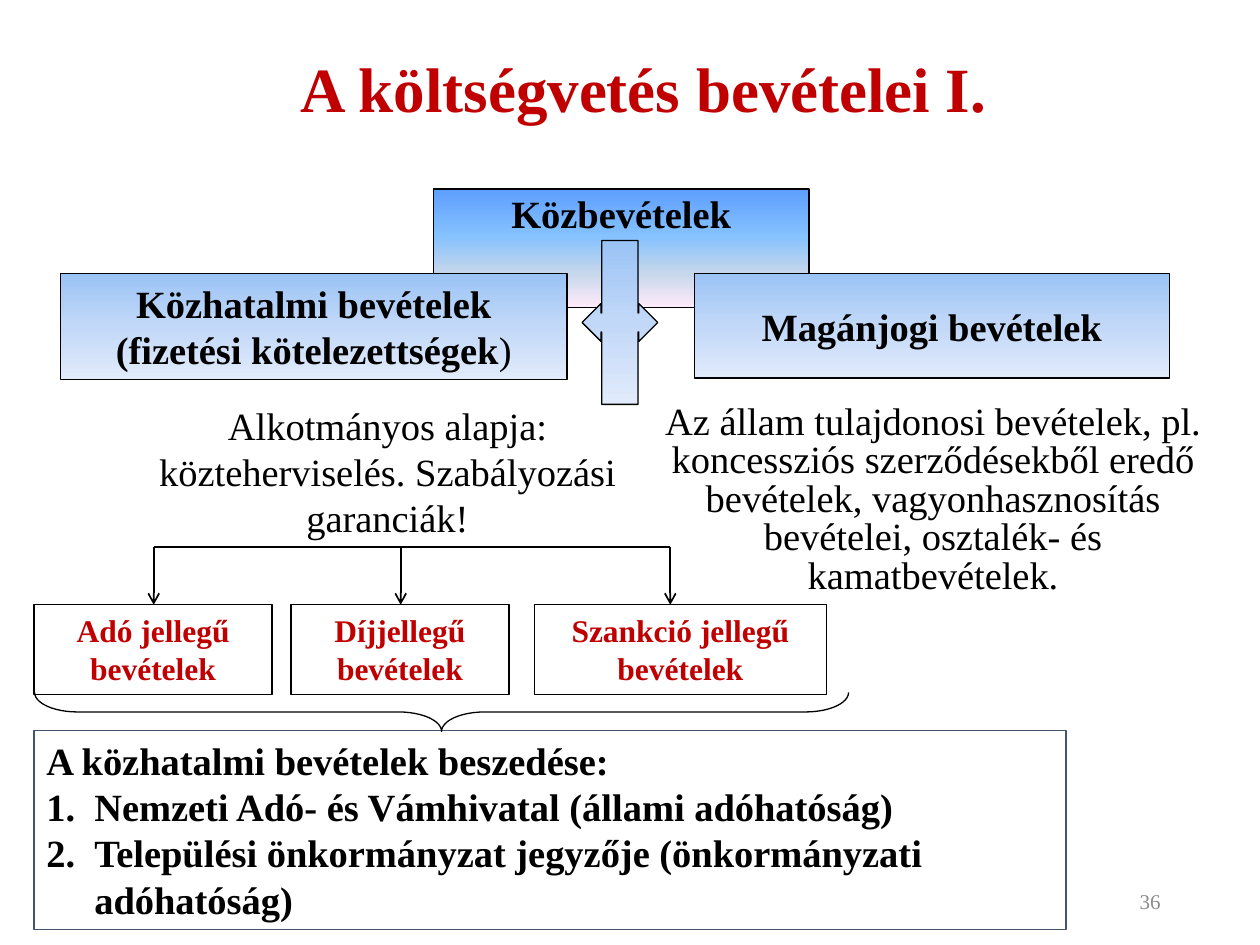
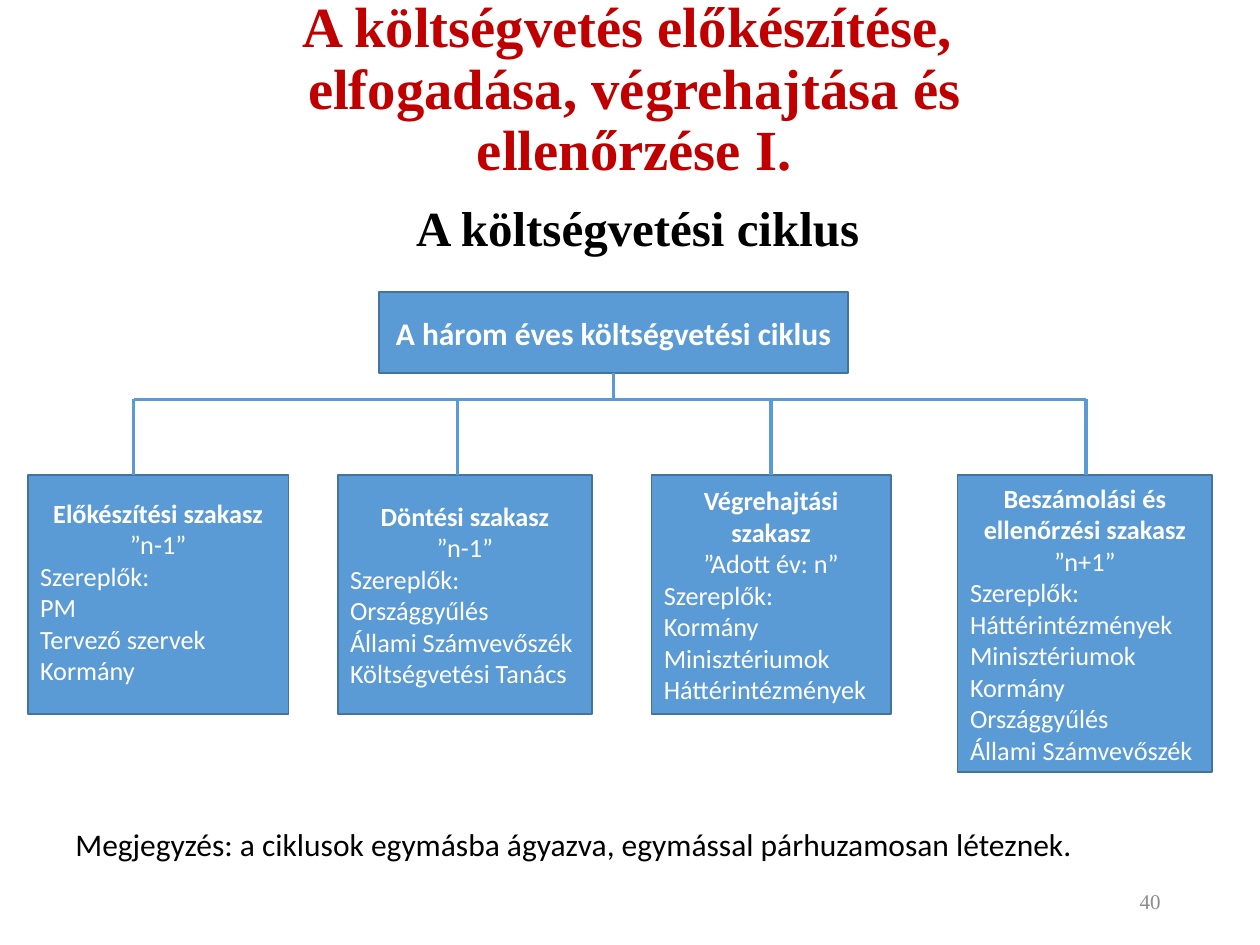
from dataclasses import dataclass

from lxml import etree
from pptx import Presentation
from pptx.dml.color import RGBColor
from pptx.enum.shapes import MSO_CONNECTOR, MSO_SHAPE
from pptx.enum.text import MSO_ANCHOR, MSO_AUTO_SIZE, PP_ALIGN
from pptx.oxml.ns import qn
from pptx.util import Inches, Pt

LEFT, CENTER, RIGHT = PP_ALIGN.LEFT, PP_ALIGN.CENTER, PP_ALIGN.RIGHT
TOP, MIDDLE = MSO_ANCHOR.TOP, MSO_ANCHOR.MIDDLE
RECT, CALLOUT, BRACE = MSO_SHAPE.RECTANGLE, MSO_SHAPE.LEFT_RIGHT_ARROW_CALLOUT, MSO_SHAPE.LEFT_BRACE
STRAIGHT = MSO_CONNECTOR.STRAIGHT
NO_FIT = MSO_AUTO_SIZE.NONE


@dataclass(frozen=True)
class Theme:
    serif: str = "Times New Roman"
    sans: str = "Calibri"
    red: str = "C00000"
    black: str = "000000"
    white: str = "FFFFFF"
    grey: str = "8C8C8C"
    slate: str = "44546A"
    blue: str = "5B9BD5"
    blue_edge: str = "43739E"
    strong_grad: tuple = ((0, "5E9EFF"), (40, "85C2FF"), (70, "C4D6EB"), (100, "FFEBFA"))
    soft_grad: tuple = ((0, "9AC3F5"), (50, "C2D8F8"), (100, "E1EBFB"))
    subtitle: float = 28
    body: float = 22
    label: float = 18
    stage: float = 15
    number: float = 12


T = Theme()


def add_box(s, at, lines=(), kind=RECT, fill=None, line=None, width=0.75, size=T.body,
            font=T.serif, color=T.black, bold=False, align=CENTER, anchor=TOP):
    at = [Inches(v) for v in at]
    if kind is None:
        sp = s.shapes.add_textbox(*at)
    else:
        sp = s.shapes.add_shape(kind, *at)
        sp.shadow.inherit = False
        sp.line.color.rgb = RGBColor.from_string(line)
        sp.line.width = Pt(width)
        if fill is None:
            sp.fill.background()
        elif isinstance(fill, str):
            sp.fill.solid()
            sp.fill.fore_color.rgb = RGBColor.from_string(fill)
        else:
            sp.fill.gradient()
            sp.fill.gradient_angle = 270
            stops = next(sp._element.iter(qn("a:gsLst")))
            for old in list(stops):
                stops.remove(old)
            for pos, rgb in fill:
                gs = etree.SubElement(stops, qn("a:gs"), pos=str(pos * 1000))
                etree.SubElement(gs, qn("a:srgbClr"), val=rgb)
    tf = sp.text_frame
    tf.word_wrap = True
    tf.auto_size = NO_FIT
    tf.vertical_anchor = anchor
    for i, text in enumerate(lines):
        p = tf.paragraphs[0] if i == 0 else tf.add_paragraph()
        p.text = text
        p.alignment = align
        p.font.name = font
        p.font.size = Pt(size)
        p.font.bold = bold
        p.font.color.rgb = RGBColor.from_string(color)
    return sp


def add_line(s, x1, y1, x2, y2, color, width, arrow=False):
    c = s.shapes.add_connector(STRAIGHT, Inches(x1), Inches(y1), Inches(x2), Inches(y2))
    c.line.color.rgb = RGBColor.from_string(color)
    c.line.width = Pt(width)
    if arrow:
        etree.SubElement(c.line._get_or_add_ln(), qn("a:tailEnd"), type="arrow")
    etree.SubElement(c._element.spPr, qn("a:effectLst"))


prs = Presentation()
prs.slide_width, prs.slide_height = Inches(10), Inches(7.5)

slides = []
for text, at, size, number in (
    ("A költségvetés bevételei I.", (1.63, 0, 6.96, 1.46), 36, "36"),
    ("A költségvetés előkészítése, \velfogadása, végrehajtása és ellenőrzése I.",
     (1.37, 0, 7.33, 1.44), 32.4, "40"),
):
    s = prs.slides.add_slide(prs.slide_layouts[5])
    title = s.shapes.title
    title.left, title.top, title.width, title.height = [Inches(v) for v in at]
    tf = title.text_frame
    tf.text = text
    tf.word_wrap = True
    tf.auto_size = NO_FIT
    tf.vertical_anchor = MIDDLE
    p = tf.paragraphs[0]
    p.alignment = CENTER
    p.line_spacing = 0.9
    p.font.name = T.serif
    p.font.size = Pt(size)
    p.font.bold = True
    p.font.color.rgb = RGBColor.from_string(T.red)
    add_box(s, (7.06, 6.95, 2.25, 0.4), [number], None, size=T.number, color=T.grey,
            align=RIGHT, anchor=MIDDLE)
    slides.append(s)

s = slides[0]
sp = add_box(s, (3.44, 1.5, 2.98, 0.94), ["Közbevételek"], fill=T.strong_grad,
             line=T.black, bold=True)
sp.text_frame.paragraphs[0].line_spacing = 0.9
sp = add_box(s, (0.48, 2.17, 4.02, 0.84), ["Közhatalmi bevételek (fizetési kötelezettségek"],
             fill=T.soft_grad, line=T.black, bold=True)
r = sp.text_frame.paragraphs[0].add_run()
r.text = ")"
r.font.bold = False
add_box(s, (5.51, 2.17, 3.77, 0.83), ["Magánjogi bevételek"], fill=T.soft_grad,
        line=T.black, bold=True, anchor=MIDDLE)
add_box(s, (4.62, 1.91, 0.6, 1.3), kind=CALLOUT, fill=T.soft_grad, line=T.black)
add_box(s, (0.93, 3.14, 4.29, 1.21),
        ["Alkotmányos alapja: közteherviselés. Szabályozási garanciák!"], None)
sp = add_box(s, (5, 3.16, 4.81, 1.64),
             ["Az állam tulajdonosi bevételek, pl. koncessziós szerződésekből eredő bevételek, "
              "vagyonhasznosítás bevételei, osztalék- és kamatbevételek."], None)
sp.text_frame.paragraphs[0].line_spacing = Pt(22)

add_line(s, 1.22, 4.34, 5.32, 4.34, T.black, 1)
for text, left, width, arrow_x in (
    ("Adó jellegű bevételek", 0.27, 1.89, 1.22),
    ("Díjjellegű bevételek", 2.31, 1.73, 3.18),
    ("Szankció jellegű bevételek", 4.24, 2.32, 5.32),
):
    add_box(s, (left, 4.8, width, 0.71), [text], line=T.black, size=T.label,
            color=T.red, bold=True)
    add_line(s, arrow_x, 4.34, arrow_x, 4.8, T.black, 1, arrow=True)

sp = add_box(s, (0.27, 5.8, 8.19, 1.58), [
    "A közhatalmi bevételek beszedése:",
    "Nemzeti Adó- és Vámhivatal (állami adóhatóság)",
    "Települési önkormányzat jegyzője (önkormányzati adóhatóság)",
], line=T.slate, bold=True, align=LEFT)
for p in sp.text_frame.paragraphs[1:]:
    pPr = p._p.get_or_add_pPr()
    pPr.set("marL", str(Inches(0.38)))
    pPr.set("indent", str(-Inches(0.38)))
    pPr.insert(0, etree.Element(qn("a:buAutoNum"), type="arabicPeriod"))
brace = add_box(s, (3.35, 2.42, 0.31, 6.46), kind=BRACE, line=T.black)
brace.rotation = 270
brace.adjustments[0] = 1.1

s = slides[1]
sp = add_box(s, (0, 1.52, 10, 0.7), ["A költségvetési ciklus"], None, size=T.subtitle, bold=True)
sp.text_frame.margin_left = Inches(0.22)
add_box(s, (3.01, 2.32, 3.72, 0.64), ["A három éves költségvetési ciklus"], fill=T.blue,
        line=T.blue_edge, width=1, size=T.label, font=T.sans, color=T.white, bold=True,
        anchor=MIDDLE)

add_line(s, 4.87, 2.96, 4.87, 3.17, T.blue, 2)
add_line(s, 1.06, 3.17, 8.62, 3.17, T.blue, 2)
stages = []
for left, width, height, line_x, name, year, actors in (
    (0.22, 2.07, 1.9, 1.06, "Előkészítési szakasz", "”n-1”",
     ["PM", "Tervező szervek", "Kormány"]),
    (2.68, 2.02, 1.9, 3.63, "Döntési szakasz", "”n-1”",
     ["Országgyűlés", "Állami Számvevőszék", "Költségvetési Tanács"]),
    (5.17, 1.9, 1.9, 6.12, "Végrehajtási szakasz", "”Adott év: n”",
     ["Kormány", "Minisztériumok", "Háttérintézmények"]),
    (7.6, 2.02, 2.36, 8.62, "Beszámolási és ellenőrzési szakasz", "”n+1”",
     ["Háttérintézmények", "Minisztériumok", "Kormány", "Országgyűlés",
      "Állami Számvevőszék"]),
):
    sp = add_box(s, (left, 3.77, width, height), [name, year, "Szereplők:", *actors],
                 fill=T.blue, line=T.blue_edge, width=1, size=T.stage, font=T.sans,
                 color=T.white, align=LEFT, anchor=MIDDLE)
    head, year_line = sp.text_frame.paragraphs[:2]
    head.alignment = year_line.alignment = CENTER
    head.font.bold = True
    add_line(s, line_x, 3.17, line_x, 3.77, T.blue, 2)
    stages.append(sp)
stages[0].text_frame.margin_bottom = Inches(0.1)

add_box(s, (0.5, 6.5, 9, 0.4),
        ["Megjegyzés: a ciklusok egymásba ágyazva, egymással párhuzamosan léteznek."],
        None, size=T.label, font=T.sans, align=LEFT)

prs.save("out.pptx")
